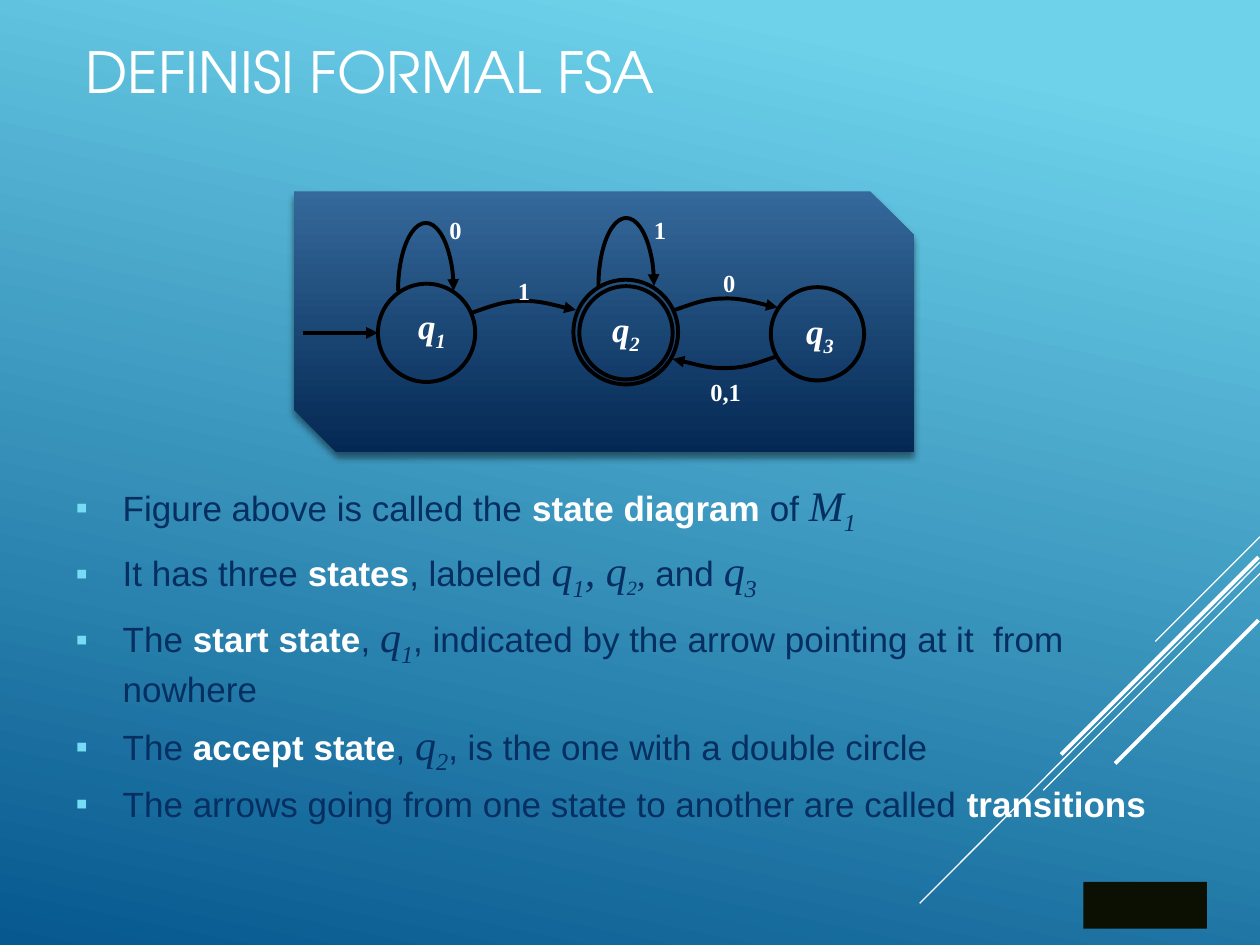
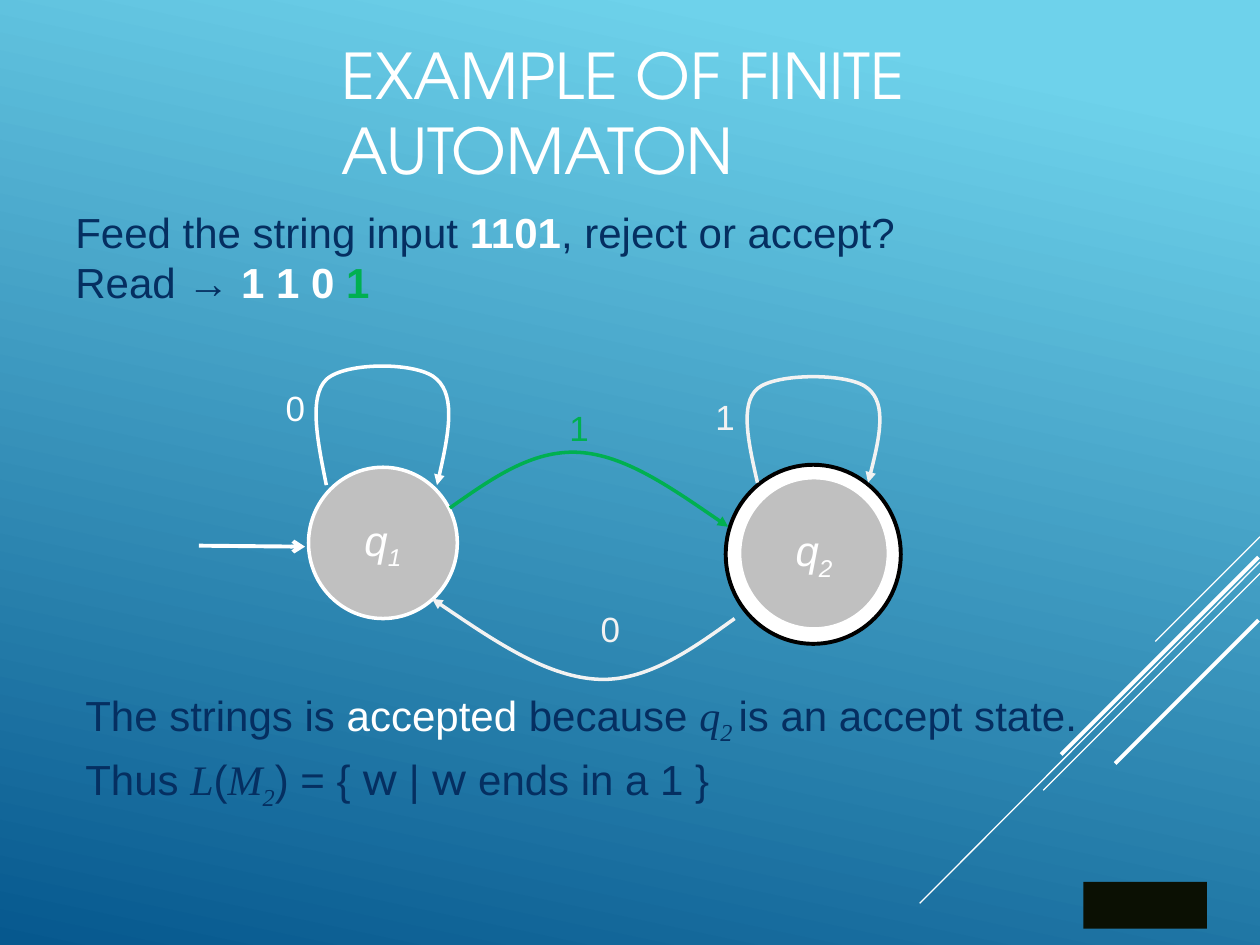
from dataclasses import dataclass, replace
from typing import NamedTuple

from lxml import etree
from pptx import Presentation
from pptx.dml.color import RGBColor
from pptx.enum.shapes import MSO_CONNECTOR, MSO_SHAPE
from pptx.enum.text import MSO_ANCHOR, MSO_AUTO_SIZE, PP_ALIGN
from pptx.oxml.ns import qn
from pptx.util import Cm, Pt

STRAIGHT = MSO_CONNECTOR.STRAIGHT
CIRCLE, RECTANGLE = MSO_SHAPE.OVAL, MSO_SHAPE.RECTANGLE
BRACKET, SNIPPED = MSO_SHAPE.LEFT_BRACKET, MSO_SHAPE.SNIP_2_DIAG_RECTANGLE
TITLE_AND_BODY, TITLE_ONLY = 1, 5


@dataclass(frozen=True)
class Theme:
    sky: str = "6ED2EB"
    deep: str = "06588E"
    panel_top: str = "35699B"
    panel_bottom: str = "042853"
    ink: str = "052F61"
    white: str = "FFFFFF"
    pale: str = "F2F2F2"
    black: str = "000000"
    green: str = "00B050"
    grey: str = "C0C0C0"
    bullet: str = "76DBF4"
    footer: str = "0B1003"
    title_font: str = "TeX Gyre Adventor"
    text_font: str = "Arial"
    math_font: str = "Times New Roman"
    set_font: str = "Calibri"
    label_size: float = 14
    list_size: float = 20
    text_size: float = 24
    set_size: float = 28
    thin: float = 0.75
    medium: float = 2
    thick: float = 2.25


THEME = Theme()


class Box(NamedTuple):
    left: float
    top: float
    width: float
    height: float


class Point(NamedTuple):
    x: float
    y: float


class Label(NamedTuple):
    text: str
    left: float
    top: float
    color: str = THEME.white
    width: float = 1.19


class Stroke(NamedTuple):
    start: Point
    end: Point
    weight: float


@dataclass(frozen=True)
class Span:
    text: str
    size: float = THEME.text_size
    color: str = THEME.ink
    font: str = THEME.text_font
    bold: bool = False
    italic: bool = False
    lowered: bool = False


RAYS = [
    Stroke(Point(25.4, 10.82), Point(23.29, 12.93), THEME.thin),
    Stroke(Point(25.4, 11.33), Point(18.54, 18.21), THEME.thin),
    Stroke(Point(25.4, 11.56), Point(21.03, 15.93), THEME.thin),
    Stroke(Point(25.37, 11.23), Point(21.39, 15.21), THEME.thick),
    Stroke(Point(25.37, 12.5), Point(22.48, 15.39), THEME.thick),
]


def rgb(color: str) -> RGBColor:
    return RGBColor.from_string(color)


def place(box: Box) -> list:
    return [Cm(length) for length in box]


def symbol(letter: str, index: str, **style) -> list[Span]:
    """A letter in italics with a lowered index."""
    base = Span(letter, **{"font": THEME.math_font, "italic": True, **style})
    return [base, replace(base, text=index, lowered=True)]


def item(text: str) -> Span:
    return Span(text, THEME.list_size)


def strong(text: str, size: float = THEME.list_size, color: str = THEME.white) -> Span:
    return Span(text, size, color, bold=True)


def write(frame, paragraphs: list[list[Span]], align=None) -> None:
    for number, spans in enumerate(paragraphs):
        para = frame.add_paragraph() if number else frame.paragraphs[0]
        para.alignment = align
        for part in spans:
            span = para.add_run()
            span.text = part.text
            font = span.font
            font.name, font.size = part.font, Pt(part.size)
            font.bold, font.italic = part.bold, part.italic
            font.color.rgb = rgb(part.color)
            if part.lowered:
                span._r.get_or_add_rPr().set("baseline", "-25000")


def add_text(page, box: Box, paragraphs: list[list[Span]], wrap: bool = True) -> None:
    frame = page.shapes.add_textbox(*place(box)).text_frame
    frame.word_wrap = wrap
    write(frame, paragraphs)


def set_line(shape, color: str, weight: float, **ends: str) -> None:
    """Set the outline; ends may name headEnd or tailEnd arrowheads."""
    shape.line.color.rgb = rgb(color)
    shape.line.width = Pt(weight)
    line = shape.element.spPr.find(qn("a:ln"))
    for end, kind in ends.items():
        etree.SubElement(line, qn(f"a:{end}"), type=kind)


def add_line(page, stroke: Stroke, color: str, **ends: str):
    points = [Cm(value) for value in (*stroke.start, *stroke.end)]
    line = page.shapes.add_connector(STRAIGHT, *points)
    set_line(line, color, stroke.weight, **ends)
    etree.SubElement(line.element.spPr, qn("a:effectLst"))
    return line


def add_shape(page, kind, box: Box, fill: str = "", line: str = "",
              weight: float = THEME.thick, **ends: str):
    shape = page.shapes.add_shape(kind, *place(box))
    shape.shadow.inherit = False
    if fill:
        shape.fill.solid()
        shape.fill.fore_color.rgb = rgb(fill)
    else:
        shape.fill.background()
    if line:
        set_line(shape, line, weight, **ends)
    else:
        shape.line.fill.background()
    return shape


def add_curve(page, points: list[Point], color: str, weight: float) -> None:
    """Draw Bézier curves through a start and groups of three points."""
    start, *rest = [(Cm(point.x), Cm(point.y)) for point in points]
    builder = page.shapes.build_freeform(*start, scale=1.0)
    builder.add_line_segments(rest, close=False)
    shape = builder.convert_to_shape()
    shape.shadow.inherit = False
    shape.fill.background()
    set_line(shape, color, weight, tailEnd="triangle")
    outline = next(shape.element.iter(qn("a:path")))
    segments = outline.findall(qn("a:lnTo"))
    for first in range(0, len(segments), 3):
        curve = etree.SubElement(outline, qn("a:cubicBezTo"))
        for segment in segments[first:first + 3]:
            curve.append(segment[0])
            outline.remove(segment)


def set_gradient(fill, first: str, last: str, angle: float, begin: float = 0) -> None:
    fill.gradient()
    fill.gradient_angle = angle
    for stop, color, position in zip(fill.gradient_stops, (first, last), (begin, 1)):
        stop.color.rgb = rgb(color)
        stop.position = position


def add_page(deck, layout: int, title: str, box: Box, size: float):
    page = deck.slides.add_slide(deck.slide_layouts[layout])
    heading = page.shapes.title
    heading.left, heading.top, heading.width, heading.height = place(box)
    frame = heading.text_frame
    frame.auto_size = MSO_AUTO_SIZE.NONE
    frame.vertical_anchor = MSO_ANCHOR.MIDDLE
    write(frame, [[Span(title, size, THEME.white, THEME.title_font)]], PP_ALIGN.LEFT)
    frame.paragraphs[0].line_spacing = Pt(1.2 * size)
    add_shape(page, RECTANGLE, Box(21.84, 17.78, 2.49, 0.94), THEME.footer)
    return page


def style_master(deck, page) -> None:
    """Give the master its background and the rays, drawn first on a page."""
    master = deck.slide_master
    set_gradient(master.background.fill, THEME.sky, THEME.deep, 258, 0.1)
    for number, ray in enumerate(RAYS, start=20):
        line = add_line(page, ray, THEME.white).element
        line.nvCxnSpPr.cNvPr.id = number
        master.shapes.element.append(line)


def fill_list(body, box: Box, paragraphs: list[list[Span]]) -> None:
    body.left, body.top, body.width, body.height = place(box)
    body.text_frame.auto_size = MSO_AUTO_SIZE.NONE
    write(body.text_frame, paragraphs)
    for para in body.text_frame.paragraphs:
        properties = para._p.get_or_add_pPr()
        properties.set("marL", str(Cm(0.95)))
        properties.set("indent", str(-Cm(0.95)))
        color = etree.SubElement(properties, qn("a:buClr"))
        etree.SubElement(color, qn("a:srgbClr"), val=THEME.bullet)
        etree.SubElement(properties, qn("a:buChar"), char="▪")


def add_panel(page, box: Box) -> None:
    panel = add_shape(page, SNIPPED, box)
    set_gradient(panel.fill, THEME.panel_top, THEME.panel_bottom, 270)
    effects = panel.element.spPr.find(qn("a:effectLst"))
    shadow = etree.SubElement(effects, qn("a:outerShdw"), blurRad=str(Pt(4)),
                              dist=str(Pt(3)), dir="5400000", rotWithShape="0")
    color = etree.SubElement(shadow, qn("a:srgbClr"), val=THEME.black)
    etree.SubElement(color, qn("a:alpha"), val="46000")


def build_definition(deck) -> None:
    page = add_page(deck, TITLE_AND_BODY, "DEFINISI FORMAL FSA",
                    Box(1.47, 0.64, 19.25, 1.57), 32.4)
    style_master(deck, page)
    fill_list(page.placeholders[1], Box(1.27, 9.53, 22.86, 7.42), [
        [item("Figure above is called the "), strong("state diagram "), item("of "),
         *symbol("M", "1")],
        [item("It has three "), strong("states"), item(", labeled "), *symbol("q", "1"),
         *symbol(", q", "2", size=THEME.list_size)[:0],
         Span(", q", font=THEME.math_font, italic=True),
         symbol("q", "2", size=THEME.list_size)[1],
         Span(",", THEME.list_size, font=THEME.math_font, italic=True),
         item(" and "), *symbol("q", "3")],
        [item("The "), strong("start state"), item(", "), *symbol("q", "1"),
         item(", indicated by the arrow pointing at it  from nowhere")],
        [item("The "), strong("accept state"), item(", "), *symbol("q", "2"),
         item(", is the one with a double circle")],
        [item("The arrows going from one state to another are called "),
         strong("transitions")],
    ])

    add_panel(page, Box(5.92, 3.86, 12.5, 5.26))
    for circle in (Box(7.62, 5.72, 1.96, 1.98), Box(11.56, 5.64, 2.11, 2.11),
                   Box(11.68, 5.77, 1.88, 1.88), Box(15.54, 5.79, 1.88, 1.88)):
        add_shape(page, CIRCLE, circle, line=THEME.black)
    for left, top in ((7.9, 4.62), (11.94, 4.52)):
        loop = add_shape(page, BRACKET, Box(left, top, 1.37, 1.12),
                         line=THEME.black, headEnd="triangle")
        loop.adjustments[0] = 0.5
        loop.rotation = 270
        loop.element.spPr.find(qn("a:xfrm")).set("flipH", "1")

    first_to_second = [Point(9.53, 6.3), Point(9.83, 6.2), Point(10.13, 6.07),
                       Point(10.49, 6.07), Point(10.85, 6.05), Point(11.43, 6.22),
                       Point(11.61, 6.25)]
    second_to_third = [Point(x + 4.07, y - 0.05) for x, y in first_to_second]
    third_to_second = [Point(29.24 - x, 13.44 - y) for x, y in second_to_third]
    for curve in (first_to_second, second_to_third, third_to_second):
        add_curve(page, curve, THEME.black, THEME.thick)
    start = Stroke(Point(6.1, 6.71), Point(7.62, 6.71), THEME.thick)
    add_line(page, start, THEME.black, tailEnd="triangle")

    for label in (Label("0", 8.81, 4.22), Label("1", 12.93, 4.22), Label("1", 10.19, 5.44),
                  Label("0", 14.33, 5.28), Label("0,1", 14.07, 7.47)):
        add_text(page, Box(label.left, label.top, label.width, 0.74),
                 [[Span(label.text, THEME.label_size, label.color, THEME.math_font, True)]])
    for state, left, top in (("1", 8.18, 6.02), ("2", 12.09, 6.07), ("3", 16, 6.12)):
        add_text(page, Box(left, top, 1.19, 0.94),
                 [symbol("q", state, size=THEME.list_size, color=THEME.white, bold=True)])


def build_example(deck) -> None:
    page = add_page(deck, TITLE_ONLY, "EXAMPLE OF FINITE AUTOMATON",
                    Box(6.63, 0.46, 17.7, 3.58), 36)
    size = THEME.text_size
    add_text(page, Box(1.27, 4.04, 22.43, 2.31), [
        [Span("Feed the string input "), strong("1101", size), Span(", reject or accept?")],
        [Span("Read → "), strong("1 1 0 ", size), strong("1", size, THEME.green)],
    ])
    word = Span("w", THEME.set_size, font=THEME.set_font)
    add_text(page, Box(1.47, 13.77, 22.43, 2.49), [
        [Span("The strings is "), Span("accepted ", color=THEME.white), Span("because "),
         *symbol("q", "2 "), Span("is an accept state.")],
        [Span("Thus "), Span("L", font=THEME.math_font, italic=True), Span("("),
         *symbol("M", "2"), Span(") = { "), word, Span(" | "), word,
         Span(" ends in a 1 }")],
    ])

    add_shape(page, CIRCLE, Box(14.63, 9.37, 3.53, 3.61), THEME.white, THEME.black)
    for state, left, top in (("1", 6.22, 9.42), ("2", 14.91, 9.63)):
        node = add_shape(page, CIRCLE, Box(left, top, 3, 3.05), THEME.grey, THEME.white,
                         THEME.medium)
        node.text_frame.word_wrap = False
        node.text_frame.vertical_anchor = MSO_ANCHOR.MIDDLE
        write(node.text_frame,
              [symbol("q", state, font=THEME.text_font, color=THEME.white)],
              PP_ALIGN.CENTER)

    first_loop = [Point(6.58, 9.78), Point(6.4, 8.89), Point(6.22, 8), Point(6.58, 7.65),
                  Point(6.96, 7.29), Point(8.46, 7.29), Point(8.81, 7.65),
                  Point(9.19, 8), Point(9.02, 8.89), Point(8.81, 9.78)]
    second_loop = [Point(x + 8.69, 9.73 - 0.89 * (9.78 - y)) for x, y in first_loop]
    forward = [Point(9.07, 10.24), Point(9.91, 9.65), Point(10.72, 9.07), Point(11.66, 9.12),
               Point(12.6, 9.17), Point(13.64, 9.91), Point(14.68, 10.62)]
    backward = [Point(14.81, 12.47), Point(13.92, 13.11), Point(13, 13.77),
                Point(11.99, 13.69), Point(10.97, 13.61), Point(9.86, 12.85),
                Point(8.71, 12.07)]
    for curve, color in ((first_loop, THEME.white), (second_loop, THEME.pale),
                         (forward, THEME.green), (backward, THEME.pale)):
        add_curve(page, curve, color, THEME.medium)
    start = Stroke(Point(4.01, 11), Point(6.15, 11.02), THEME.thick)
    add_line(page, start, THEME.white, tailEnd="arrow")

    for label in (Label("0", 5.51, 7.67, width=1.47), Label("1", 14.17, 7.85, THEME.pale, 1.47),
                  Label("1", 11.23, 8.08, THEME.green, 0.91),
                  Label("0", 11.86, 12.12, THEME.pale, 0.91)):
        add_text(page, Box(label.left, label.top, label.width, 1.12),
                 [[Span(label.text, THEME.list_size, label.color)]])


def main() -> None:
    deck = Presentation()
    deck.slide_width, deck.slide_height = Cm(25.4), Cm(19.05)
    build_definition(deck)
    build_example(deck)
    deck.save("out.pptx")


if __name__ == "__main__":
    main()
